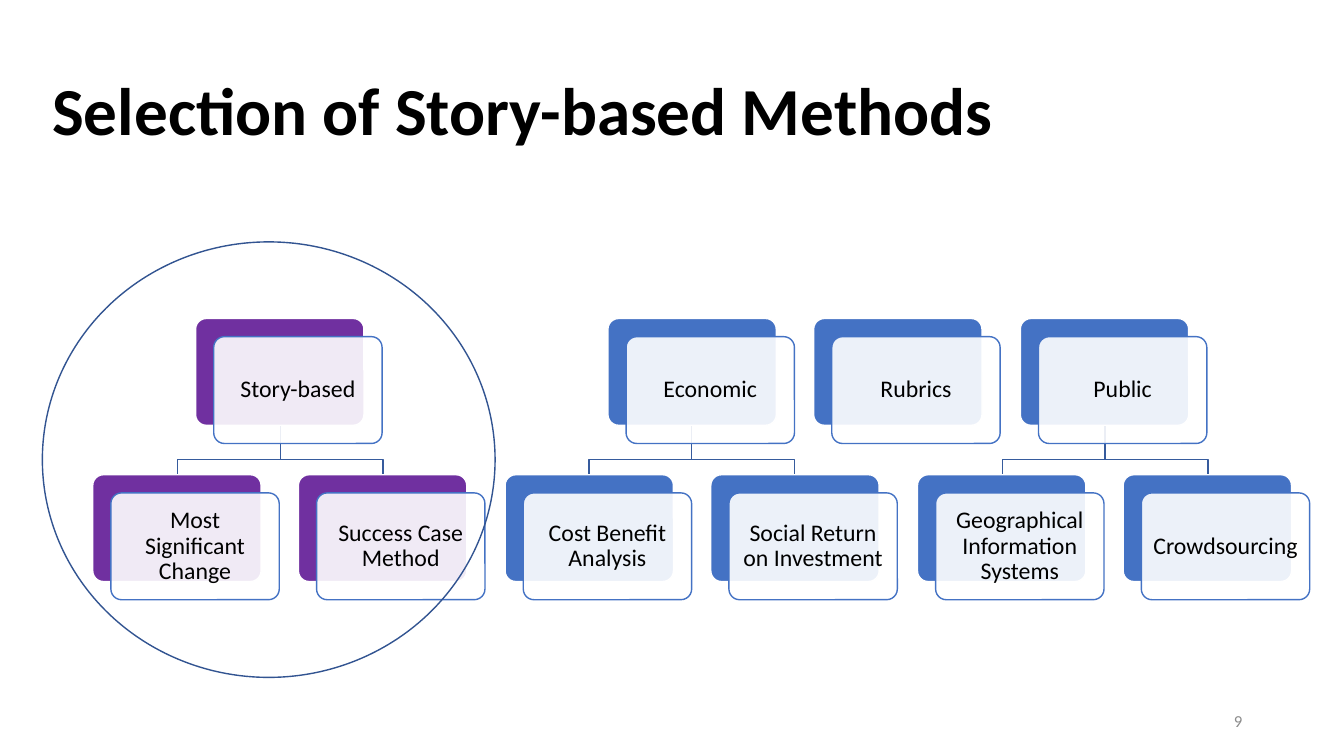
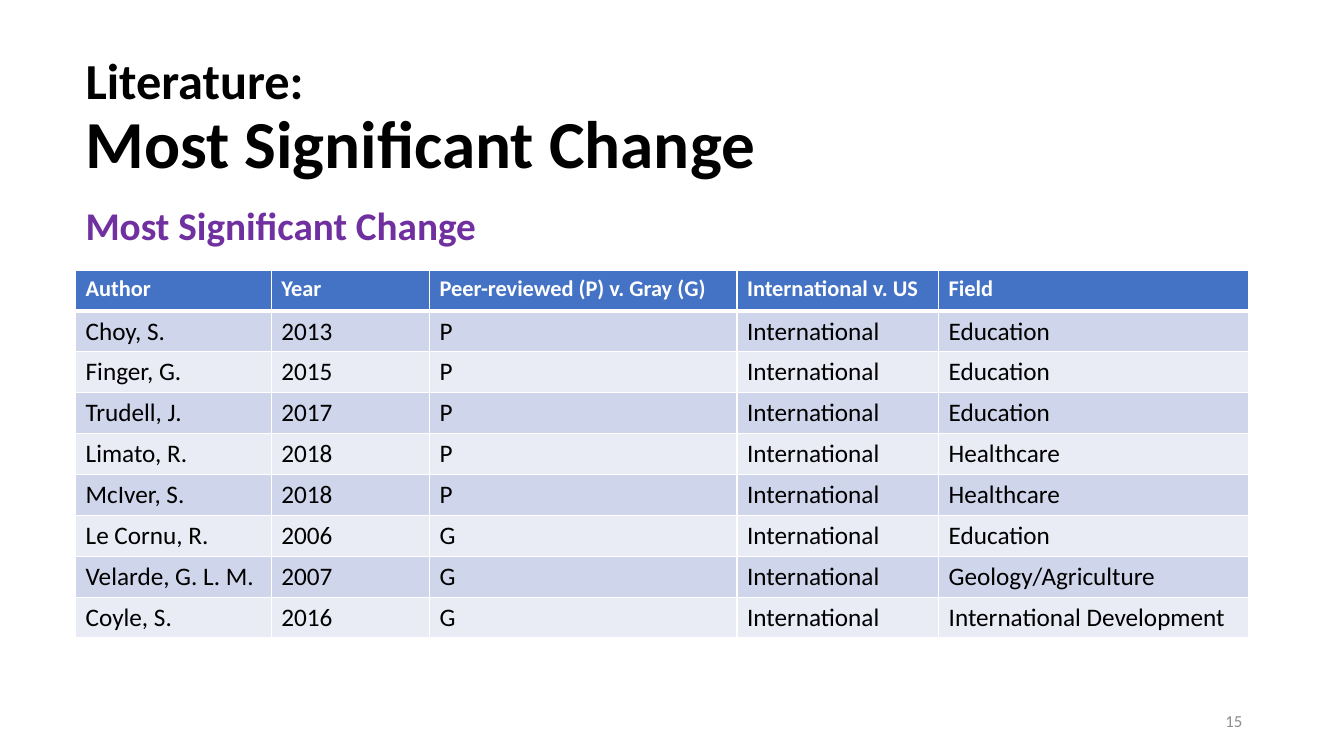
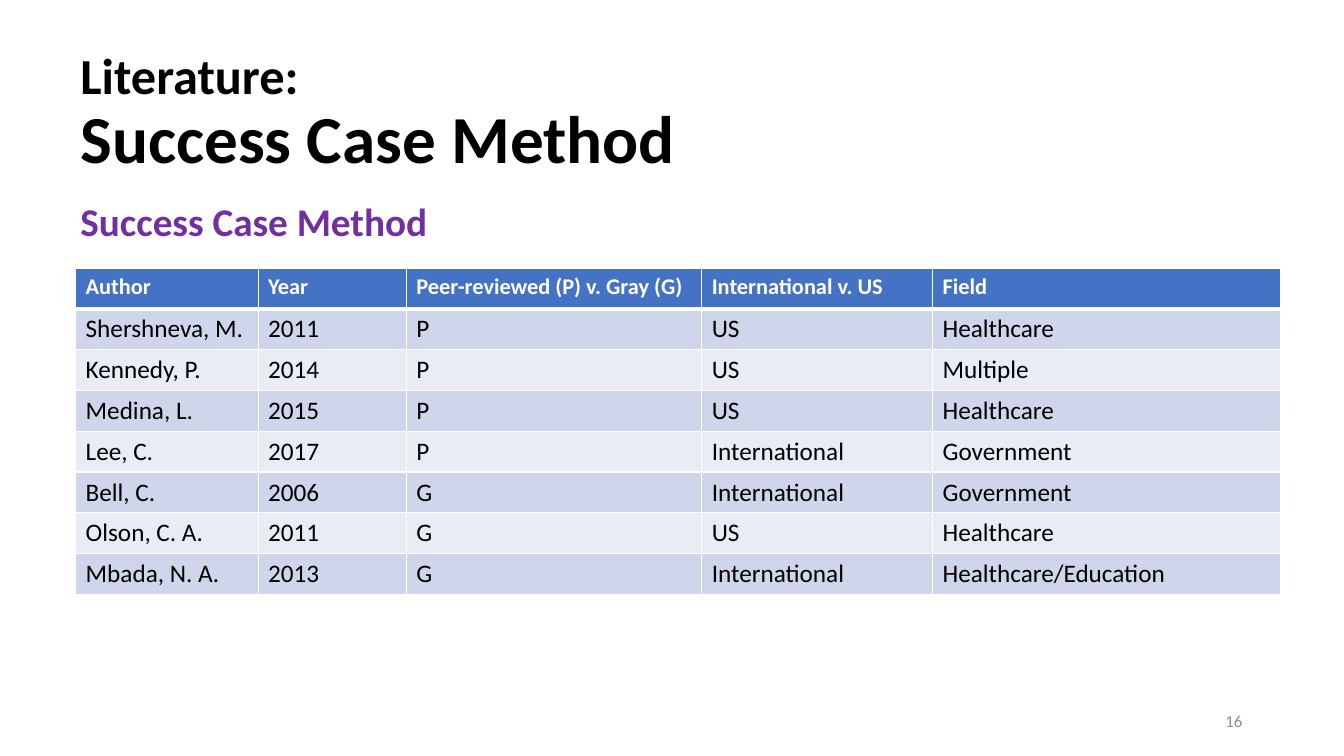
from lxml.etree import SubElement
from pptx import Presentation
from pptx.dml.color import RGBColor
from pptx.enum.shapes import MSO_SHAPE
from pptx.enum.text import MSO_ANCHOR, PP_ALIGN
from pptx.oxml import parse_xml
from pptx.oxml.ns import nsdecls, qn
from pptx.util import Pt

EMU_PER_PX = 9144  # 100 px to the inch

BLACK, WHITE, GRAY = "000000", "FFFFFF", "8C8C8C"
BLUE, PURPLE = "4472C4", "7030A0"
LINK_BLUE, RING_BLUE = "365B9D", "325491"
BANDS = ("CFD5EA", "E9EBF5")


def px(length):
    return round(length) * EMU_PER_PX


def rgb(code):
    return RGBColor.from_string(code)


def apply(target, formats):
    for name, value in formats.items():
        setattr(target, name, value)


class Deck:
    """Holds the shared style and the slide being filled."""

    font_name = "Calibri"
    title_size, kicker_size, subtitle_size, page_size = 48, 36, 28, 12
    card_size, header_size, body_size = 17, 16, 18
    card_width, card_height, card_shift, card_inset = 167, 106, 18, 7

    def __init__(self, width, height):
        self.presentation = Presentation()
        apply(self.presentation, {"slide_width": px(width), "slide_height": px(height)})
        self.slide = None

    def start(self, page):
        self.slide = self.presentation.slides.add_slide(self.presentation.slide_layouts[6])
        self.text((942, 695, 300, 40), page, self.page_size, GRAY,
                  {"alignment": PP_ALIGN.RIGHT}, MSO_ANCHOR.MIDDLE)

    def run(self, paragraph, content, size, color=BLACK, bold=False):
        run = paragraph.add_run()
        run.text = content
        apply(run.font, {"name": self.font_name, "size": Pt(size), "bold": bold})
        run.font.color.rgb = rgb(color)

    def text(self, box, content, size, color=BLACK, layout=None,
             anchor=MSO_ANCHOR.TOP, bold=False):
        frame = self.slide.shapes.add_textbox(*map(px, box)).text_frame
        apply(frame, {"word_wrap": True, "vertical_anchor": anchor})
        paragraph = frame.paragraphs[0]
        apply(paragraph, layout or {})
        if content:
            self.run(paragraph, content, size, color, bold)
        return paragraph

    def title(self, box, heading, kicker=None):
        paragraph = self.text(box, "", self.title_size, layout={"line_spacing": 0.9},
                              anchor=MSO_ANCHOR.MIDDLE)
        if kicker:
            self.run(paragraph, kicker, self.kicker_size, bold=True)
            paragraph.add_line_break()
        self.run(paragraph, heading, self.title_size, bold=True)

    def style(self, shape, fill, line):
        shape.shadow.inherit = False
        if fill:
            shape.fill.solid()
            shape.fill.fore_color.rgb = rgb(fill)
        else:
            shape.fill.background()
        shape.line.color.rgb = rgb(line)
        shape.line.width = Pt(1)

    def shape(self, kind, box, fill, line):
        shape = self.slide.shapes.add_shape(kind, *map(px, box))
        self.style(shape, fill, line)
        return shape

    def card(self, left, top, label, color):
        """A coloured plate with a translucent label plate in front."""
        plates = []
        for shift, fill, line in ((0, color, WHITE), (self.card_shift, WHITE, BLUE)):
            plate = self.shape(MSO_SHAPE.ROUNDED_RECTANGLE,
                               (left + shift, top + shift, self.card_width, self.card_height),
                               fill, line)
            plate.adjustments[0] = 0.1
            plates.append(plate)
        front = plates[-1]
        fill_color = front.fill._xPr.find(qn("a:solidFill"))[0]
        SubElement(fill_color, qn("a:alpha"), val="90000")
        frame = front.text_frame
        apply(frame, {"word_wrap": True, "vertical_anchor": MSO_ANCHOR.MIDDLE})
        apply(frame, dict.fromkeys(("margin_left", "margin_top", "margin_right", "margin_bottom"),
                                   px(self.card_inset)))
        paragraph = frame.paragraphs[0]
        apply(paragraph, {"alignment": PP_ALIGN.CENTER, "line_spacing": 0.9})
        self.run(paragraph, label, self.card_size)

    def link(self, parent, child, bend):
        """A bent line from a parent's foot to a child's head."""
        (start_x, start_y), (end_x, end_y) = parent, child
        builder = self.slide.shapes.build_freeform(px(start_x), px(start_y))
        corners = ((start_x, bend), (end_x, bend), (end_x, end_y))
        builder.add_line_segments([(px(x), px(y)) for x, y in corners], close=False)
        self.style(builder.convert_to_shape(), None, LINK_BLUE)

    def borders(self, cell, top, bottom):
        properties = cell._tc.get_or_add_tcPr()
        for index, (side, points) in enumerate(
                (("L", 1), ("R", 1), ("T", top), ("B", bottom))):
            properties.insert(index, parse_xml(
                f'<a:ln{side} {nsdecls("a")} w="{Pt(points)}"><a:solidFill>'
                f'<a:srgbClr val="{WHITE}"/></a:solidFill></a:ln{side}>'))

    def table(self, left, top, height, widths, rows):
        table = self.slide.shapes.add_table(
            len(rows), len(widths), *map(px, (left, top, sum(widths), height))).table
        for column, width in zip(table.columns, widths):
            column.width = px(width)
        for r, row in enumerate(rows):
            header = r == 0
            fill = BLUE if header else BANDS[(r - 1) % 2]
            look = (self.header_size, WHITE, True) if header else (self.body_size, BLACK, False)
            for c, content in enumerate(row):
                cell = table.cell(r, c)
                cell.fill.solid()
                cell.fill.fore_color.rgb = rgb(fill)
                self.borders(cell, 3 if r == 1 else 1, 3 if header else 1)
                self.run(cell.text_frame.paragraphs[0], content, *look)


# Method families: column in the grid, colour, name, members
FAMILIES = [
    (0.5, PURPLE, "Story-based", ["Most Significant Change", "Success Case Method"]),
    (2.5, BLUE, "Economic", ["Cost Benefit Analysis", "Social Return on Investment"]),
    (3.5, BLUE, "Rubrics", []),
    (4.5, BLUE, "Public", ["Geographical Information Systems", "Crowdsourcing"]),
]

HEADER = ("Author", "Year", "Peer-reviewed (P) v. Gray (G)", "International v. US", "Field")

CHANGE_STUDIES = [
    ("Choy, S.", "2013", "P", "International", "Education"),
    ("Finger, G.", "2015", "P", "International", "Education"),
    ("Trudell, J.", "2017", "P", "International", "Education"),
    ("Limato, R.", "2018", "P", "International", "Healthcare"),
    ("McIver, S.", "2018", "P", "International", "Healthcare"),
    ("Le Cornu, R.", "2006", "G", "International", "Education"),
    ("Velarde, G. L. M.", "2007", "G", "International", "Geology/Agriculture"),
    ("Coyle, S.", "2016", "G", "International", "International Development"),
]

CASE_STUDIES = [
    ("Shershneva, M.", "2011", "P", "US", "Healthcare"),
    ("Kennedy, P.", "2014", "P", "US", "Multiple"),
    ("Medina, L.", "2015", "P", "US", "Healthcare"),
    ("Lee, C.", "2017", "P", "International", "Government"),
    ("Bell, C.", "2006", "G", "International", "Government"),
    ("Olson, C. A.", "2011", "G", "US", "Healthcare"),
    ("Mbada, N. A.", "2013", "G", "International", "Healthcare/Education"),
]


def methods_slide(deck):
    family_top, member_top, bend = 316, 471, 456

    def column_left(column):
        return round(92 + column * 204.4)

    deck.start("9")
    deck.title((42, 40, 1150, 145), "Selection of Story-based Methods")

    # Place the cards of the tree
    cards, links = [], []
    for column, color, family, members in FAMILIES:
        family_left = column_left(column)
        cards.append((family_left, family_top, family, color))
        for offset, member in zip((-0.5, 0.5), members):
            member_left = column_left(column + offset)
            cards.append((member_left, member_top, member, color))
            links.append((family_left, member_left))

    # Links lie behind the cards
    middle = deck.card_width / 2
    for family_left, member_left in links:
        deck.link((family_left + middle, family_top + deck.card_height),
                  (member_left + middle, member_top), bend)
    for card in cards:
        deck.card(*card)

    # Ring around the chosen family
    deck.shape(MSO_SHAPE.OVAL, (42, 240, 449, 432), None, RING_BLUE)


def literature_slide(deck, page, method, left, title_top, subtitle_top,
                     table_top, table_height, widths, studies):
    deck.start(page)
    deck.title((left, title_top, 1150, 121), method, "Literature:")
    deck.text((left, subtitle_top, 593, 57), method, deck.subtitle_size, PURPLE, bold=True)
    deck.table(75, table_top, table_height, widths, [HEADER, *studies])


def main():
    deck = Deck(1333, 750)
    methods_slide(deck)
    literature_slide(deck, "15", "Most Significant Change", 75, 58, 195, 268, 365,
                     (194, 157, 305, 200, 307), CHANGE_STUDIES)
    literature_slide(deck, "16", "Success Case Method", 70, 53, 191, 266, 324,
                     (181, 147, 293, 229, 345), CASE_STUDIES)
    deck.presentation.save("out.pptx")


if __name__ == "__main__":
    main()
